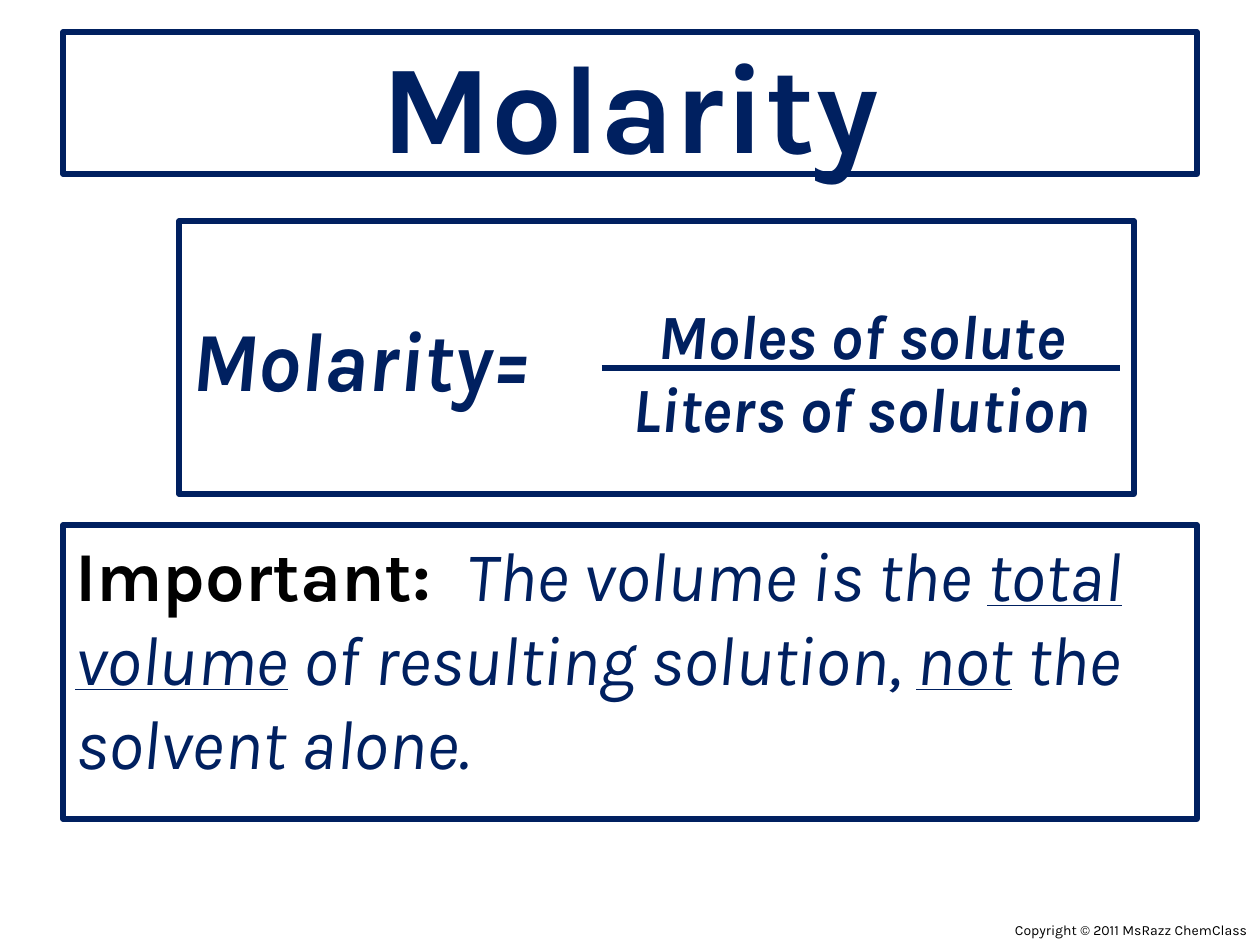
from lxml import etree
from pptx import Presentation
from pptx import util as u
from pptx.dml.color import RGBColor
from pptx.enum import shapes, text
from pptx.oxml.ns import qn

PX = u.Inches(1) / 126
FONT = "Karla"
COLORS = {"navy": "002060", "black": "000000", "white": "FFFFFF"}
CENTER, RIGHT, LEFT = text.PP_ALIGN.CENTER, text.PP_ALIGN.RIGHT, text.PP_ALIGN.LEFT
TOP, MIDDLE = text.MSO_ANCHOR.TOP, text.MSO_ANCHOR.MIDDLE


def px(n):
    return u.Emu(round(n * PX))


def color(name):
    return RGBColor.from_string(COLORS[name])


def style_line(line):
    line.color.rgb = color("navy")
    line.width = u.Pt(3)


def write(sp, runs, size, align=LEFT, anchor=TOP, **common):
    """Fill a shape with one paragraph of (wording, format) runs."""
    tf = sp.text_frame
    tf.word_wrap = True
    tf.vertical_anchor = anchor
    p = tf.paragraphs[0]
    p.alignment = align
    for wording, extra in runs:
        r = p.add_run()
        r.text = wording
        values = {"name": FONT, "size": u.Pt(size), **common, **extra}
        r.font.color.rgb = color(values.pop("color", "navy"))
        for key, value in values.items():
            setattr(r.font, key, value)


def add_panel(s, box, runs, size, **fmt):
    sp = s.shapes.add_shape(shapes.MSO_SHAPE.RECTANGLE, *map(px, box))
    sp.shadow.inherit = False
    sp.fill.solid()
    sp.fill.fore_color.rgb = color("white")
    style_line(sp.line)
    write(sp, runs, size, **fmt)


def add_label(s, box, wording, size, **fmt):
    sp = s.shapes.add_textbox(*map(px, box))
    write(sp, [(wording, {})], size, **fmt)


def add_rule(s, x1, x2, y):
    line = s.shapes.add_connector(
        shapes.MSO_CONNECTOR.STRAIGHT, px(x1), px(y), px(x2), px(y))
    style_line(line.line)
    etree.SubElement(line._element.spPr, qn("a:effectLst"))


def main():
    prs = Presentation()
    prs.slide_width, prs.slide_height = px(1260), px(945)
    s = prs.slides.add_slide(prs.slide_layouts[6])

    # Copyright line
    add_label(s, (998, 915, 262, 30), "Copyright © 2011 MsRazz ChemClass", 8,
              align=RIGHT, anchor=MIDDLE, color="black")

    # Title
    add_panel(s, (63, 32, 1134, 142), [("Molarity", {})], 72,
              align=CENTER, anchor=MIDDLE, bold=True)

    # Formula with its fraction
    add_panel(s, (179, 221, 955, 273), [("Molarity=", {})], 48,
              anchor=MIDDLE, bold=True, italic=True)
    add_rule(s, 602, 1120, 368)
    for box, wording in (((599, 290, 525, 89), "Moles of solute"),
                         ((588, 363, 546, 89), "Liters of solution")):
        add_label(s, box, wording, 36, align=CENTER, bold=True, italic=True)

    # Important note
    plain = {"italic": True}
    underlined = {"italic": True, "underline": True}
    add_panel(s, (63, 525, 1134, 294), [
        ("Important:  ", {"bold": True, "color": "black"}),
        ("The volume is the ", plain),
        ("total volume", underlined),
        (" of resulting solution, ", plain),
        ("not", underlined),
        (" the solvent alone.", plain),
    ], 40)

    prs.save("out.pptx")


if __name__ == "__main__":
    main()
